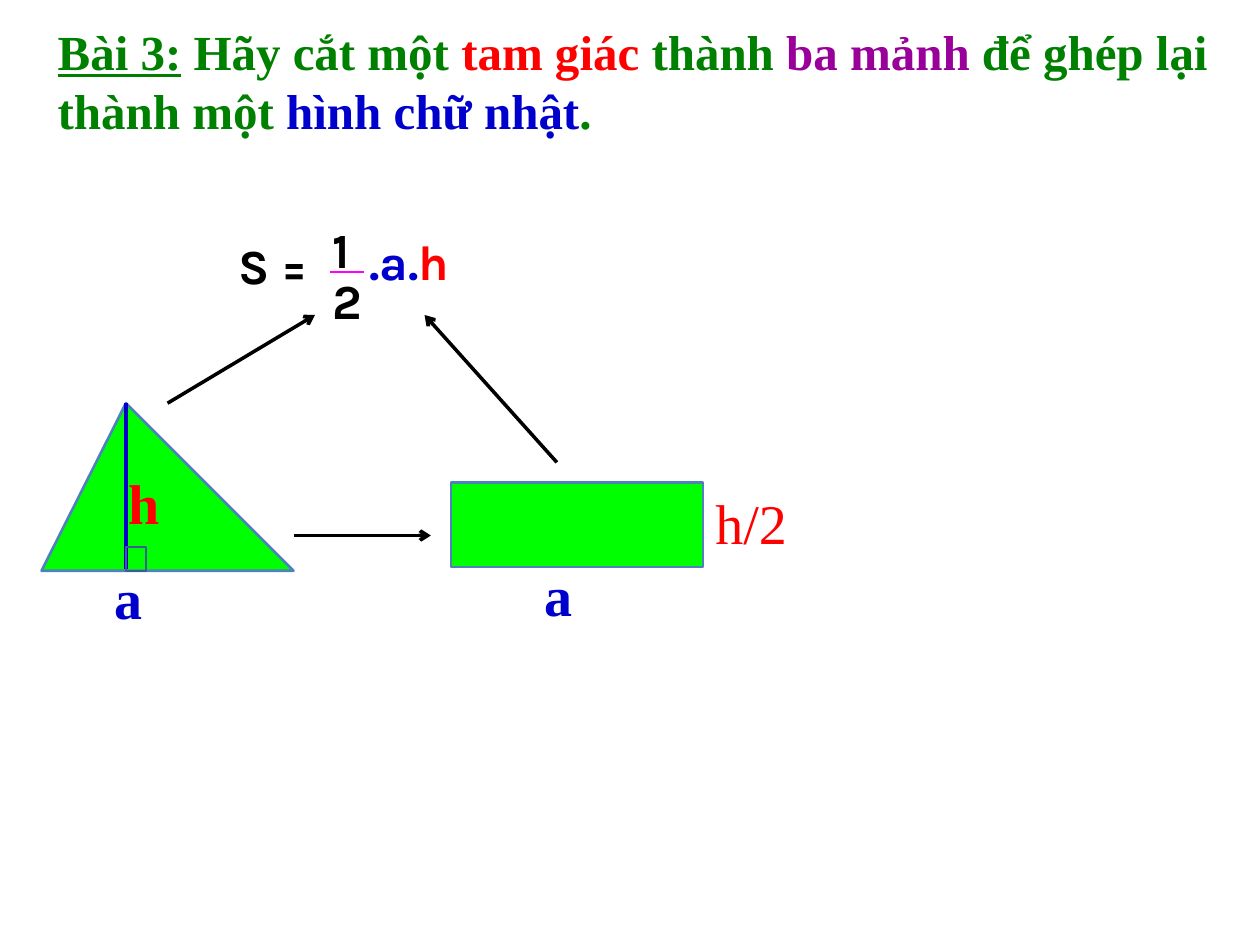
import pptx
import pptx.util
import pptx.dml.color
import pptx.enum.shapes
import pptx.enum.text
import pptx.oxml
import pptx.oxml.ns

Inches = pptx.util.Inches

COLORS = {
    "black": "000000",
    "green": "008000",
    "red": "FF0000",
    "purple": "990099",
    "blue": "0000CC",
    "pink": "FF00FF",
    "lime": "00FF00",
    "outline": "4F81BD",
    "marker": "3A5F8C",
}
TITLE = {"name": "Times New Roman", "size": pptx.util.Pt(28), "bold": True}
LABEL = {**TITLE, "size": pptx.util.Pt(32)}
PLAIN = {**LABEL, "bold": False}
FORMULA = {**TITLE, "name": "Karla"}


def rgb(color):
    return pptx.dml.color.RGBColor.from_string(COLORS[color])


class Canvas:
    def __init__(self, slide):
        self.slide = slide
        self.shapes = slide.shapes

    def start_group(self):
        self.shapes = self.slide.shapes.add_group_shape().shapes

    def end_group(self):
        self.shapes = self.slide.shapes

    def text(self, box, runs, style, indent=0.1):
        s = self.shapes.add_textbox(*map(Inches, box))
        tf = s.text_frame
        frame = {
            "word_wrap": True,
            "auto_size": pptx.enum.text.MSO_AUTO_SIZE.SHAPE_TO_FIT_TEXT,
            "margin_left": Inches(indent),
        }
        for key, value in frame.items():
            setattr(tf, key, value)
        p = tf.paragraphs[0]
        for words, color, *extra in runs:
            r = p.add_run()
            r.text = words
            r.font.color.rgb = rgb(color)
            for key, value in {**style, **dict(extra)}.items():
                setattr(r.font, key, value)

    def paint(self, s, fill, line, width):
        s.shadow.inherit = False
        if fill:
            s.fill.solid()
            s.fill.fore_color.rgb = rgb(fill)
        else:
            s.fill.background()
        s.line.color.rgb = rgb(line)
        s.line.width = pptx.util.Pt(width)

    def rect(self, box, fill=None, line="outline", width=1.5):
        kind = pptx.enum.shapes.MSO_SHAPE.RECTANGLE
        self.paint(self.shapes.add_shape(kind, *map(Inches, box)), fill, line, width)

    def polygon(self, points, fill, line="outline", width=1.5):
        start, *rest = [(Inches(x), Inches(y)) for x, y in points]
        builder = self.shapes.build_freeform(*start)
        builder.add_line_segments(rest, close=True)
        self.paint(builder.convert_to_shape(), fill, line, width)

    def line(self, start, end, color="black", width=2, arrow=False):
        kind = pptx.enum.shapes.MSO_CONNECTOR.STRAIGHT
        s = self.shapes.add_connector(kind, *map(Inches, start + end))
        s.line.color.rgb = rgb(color)
        s.line.width = pptx.util.Pt(width)
        props = s._element.spPr
        if arrow:
            tail = pptx.oxml.parse_xml(
                f'<a:tailEnd {pptx.oxml.ns.nsdecls("a")} type="arrow"/>')
            props.find(pptx.oxml.ns.qn("a:ln")).append(tail)
        props.append(pptx.oxml.parse_xml(
            f'<a:effectLst {pptx.oxml.ns.nsdecls("a")}/>'))


def main():
    prs = pptx.Presentation()
    prs.slide_width, prs.slide_height = Inches(10), Inches(7.5)
    c = Canvas(prs.slides.add_slide(prs.slide_layouts[6]))

    apex = (1, 3.2)
    c.polygon([(0.33, 4.53), apex, (2.33, 4.53)], "lime")
    c.text((0.36, 0.12, 9.64, 1.04), [
        ("Bài 3:", "green", ("underline", True)),
        (" Hãy cắt một ", "green"),
        ("tam giác ", "red"),
        ("thành ", "green"),
        ("ba mảnh ", "purple"),
        ("để ghép lại thành một ", "green"),
        ("hình chữ nhật", "blue"),
        (".", "green"),
    ], TITLE)
    c.rect((3.58, 3.83, 2, 0.67), "lime")
    c.line((2.33, 4.25), (3.42, 4.25), arrow=True)
    c.line(apex, (1, 4.52), "blue")
    c.rect((1, 4.34, 0.16, 0.19), line="marker", width=1.25)

    for left, top, words, color, style in [
        (0.81, 4.42, "a", "blue", LABEL),
        (0.92, 3.67, "h", "red", LABEL),
        (4.22, 4.4, "a", "blue", LABEL),
        (5.58, 3.83, "h/2", "red", PLAIN),
    ]:
        c.text((left, top, 1.69, 0.64), [(words, color)], style)

    c.start_group()
    c.text((1.5, 1.82, 1.28, 0.57), [("S =", "black")], FORMULA, indent=0.39)
    c.text((2.73, 1.79, 3.12, 0.57), [(".a.", "blue"), ("h", "red")],
           FORMULA, indent=0.2)
    for digit, top in (("1", 1.69), ("2", 2.1)):
        c.text((2.54, top, 0.83, 0.57), [(digit, "black")], FORMULA)
    c.line((2.62, 2.16), (2.89, 2.16), "pink", 1.5)
    c.end_group()

    c.line((1.33, 3.2), (2.5, 2.5), arrow=True)
    c.line((4.42, 3.67), (3.37, 2.5), arrow=True)
    prs.save("out.pptx")


if __name__ == "__main__":
    main()
